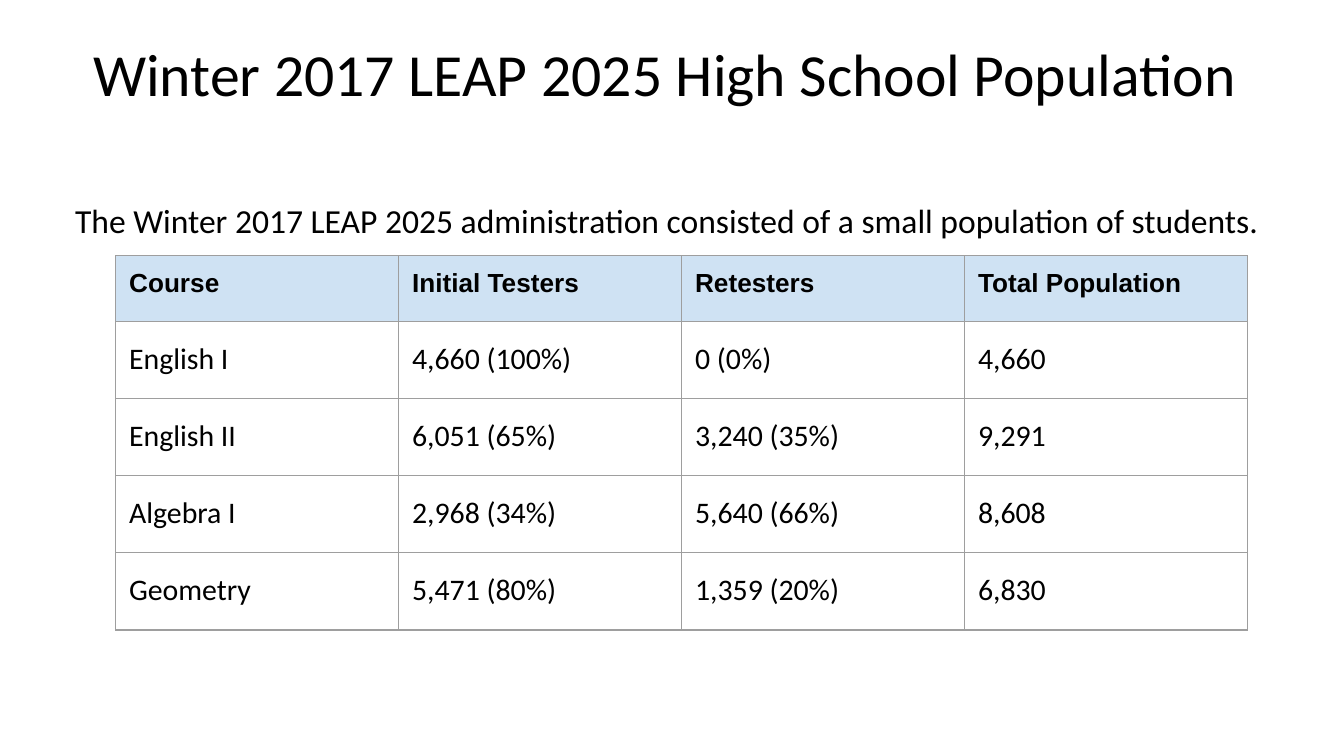
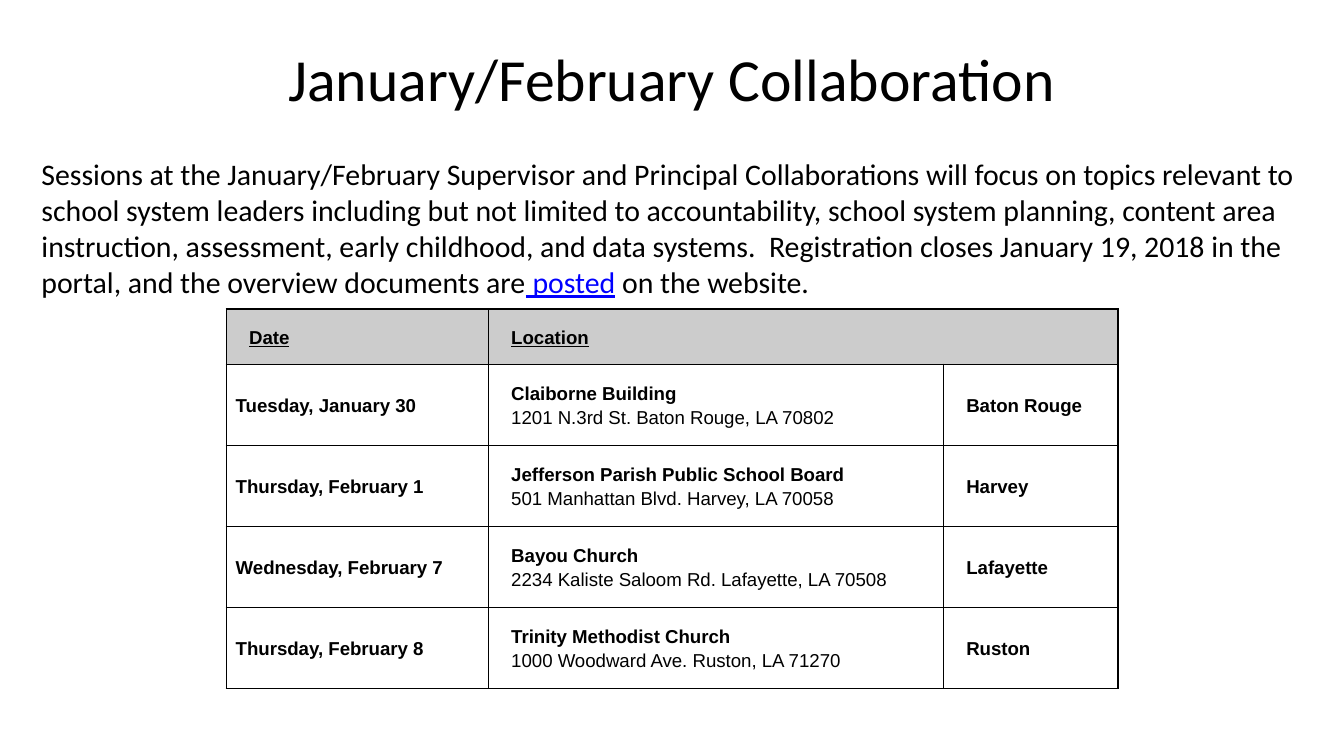
"""Build two slides on the Winter 2017 testers and the winter collaborations."""
from lxml import etree
from pptx import Presentation
from pptx.dml.color import RGBColor
from pptx.enum.text import MSO_ANCHOR, PP_ALIGN
from pptx.oxml.ns import qn
from pptx.util import Pt

CENTER = PP_ALIGN.CENTER
LEFT = PP_ALIGN.LEFT
MIDDLE = MSO_ANCHOR.MIDDLE
TOP = MSO_ANCHOR.TOP

COLORS = {
    "text": "000000",
    "link": "0000FF",
    "population_header": "CFE2F3",
    "population_border": "9E9E9E",
    "session_header": "CCCCCC",
    "session_border": "000000",
}
INSET = 7.2
LINE_SPACING = 1.15

POPULATION = [
    ("Course", "Initial Testers", "Retesters", "Total Population"),
    ("English I", "4,660 (100%)", "0 (0%)", "4,660"),
    ("English II", "6,051 (65%)", "3,240 (35%)", "9,291"),
    ("Algebra I", "2,968 (34%)", "5,640 (66%)", "8,608"),
    ("Geometry", "5,471 (80%)", "1,359 (20%)", "6,830"),
]
SESSIONS = [
    ("Tuesday, January 30", "Claiborne Building",
     "1201 N.3rd St. Baton Rouge, LA 70802", "Baton Rouge"),
    ("Thursday, February 1", "Jefferson Parish Public School Board",
     "501 Manhattan Blvd. Harvey, LA 70058", "Harvey"),
    ("Wednesday, February 7", "Bayou Church",
     "2234 Kaliste Saloom Rd. Lafayette, LA 70508", "Lafayette"),
    ("Thursday, February 8", "Trinity Methodist Church",
     "1000 Woodward Ave. Ruston, LA 71270", "Ruston"),
]
OVERVIEW = (
    "Sessions at the January/February Supervisor and Principal Collaborations will "
    "focus on topics relevant to school system leaders including but not limited to "
    "accountability, school system planning, content area instruction, assessment, "
    "early childhood, and data systems.  Registration closes January 19, 2018 in "
    "the portal, and the overview documents are"
)


def add_text(paragraph, text, size=16, font="Calibri", color="text",
             bold=False, underline=False):
    """Append a formatted run to a paragraph."""
    run = paragraph.add_run()
    run.text = text
    run.font.size = Pt(size)
    run.font.name = font
    run.font.bold = bold
    run.font.underline = underline
    run.font.color.rgb = RGBColor.from_string(COLORS[color])


def add_box(slide, left, top, width, height, anchor=TOP, align=LEFT):
    """Add a wrapping text box and return its first paragraph."""
    frame = slide.shapes.add_textbox(Pt(left), Pt(top), Pt(width), Pt(height)).text_frame
    frame.word_wrap = True
    frame.vertical_anchor = anchor
    frame.margin_left = frame.margin_right = Pt(INSET)
    frame.margin_top = frame.margin_bottom = Pt(INSET)
    paragraph = frame.paragraphs[0]
    paragraph.alignment = align
    return paragraph


def add_title(slide, text, top, height):
    """Add the centred slide title."""
    paragraph = add_box(slide, 36, top, 648, height, MIDDLE, CENTER)
    add_text(paragraph, text, size=32)


def set_borders(cell, color, width):
    """Draw the four borders of a table cell."""
    properties = cell._tc.get_or_add_tcPr()
    for side in ("lnL", "lnR", "lnT", "lnB"):
        line = etree.SubElement(properties, qn(f"a:{side}"), w=str(Pt(width)))
        fill = etree.SubElement(line, qn("a:solidFill"))
        etree.SubElement(fill, qn("a:srgbClr"), val=COLORS[color])


def add_table(slide, left, top, widths, heights, header, border, border_width):
    """Add a table with a filled header row and plain body cells."""
    frame = slide.shapes.add_table(len(heights), len(widths), Pt(left), Pt(top),
                                   Pt(sum(widths)), Pt(sum(heights)))
    table = frame.table
    table.horz_banding = table.first_row = False
    for column, width in zip(table.columns, widths):
        column.width = Pt(width)
    for index, (row, height) in enumerate(zip(table.rows, heights)):
        row.height = Pt(height)
        for cell in row.cells:
            set_borders(cell, border, border_width)
            if index == 0:
                cell.fill.solid()
                cell.fill.fore_color.rgb = RGBColor.from_string(COLORS[header])
            else:
                cell.fill.background()
    return table


def fill_cell(cell, lines, side=INSET, end=INSET, anchor=TOP, indent=0,
              spacing=LINE_SPACING):
    """Write one paragraph per (text, format) pair into a cell."""
    cell.margin_left = cell.margin_right = Pt(side)
    cell.margin_top = cell.margin_bottom = Pt(end)
    cell.vertical_anchor = anchor
    frame = cell.text_frame
    for index, (text, style) in enumerate(lines):
        paragraph = frame.add_paragraph() if index else frame.paragraphs[0]
        paragraph.line_spacing = spacing
        if indent:
            paragraph._p.get_or_add_pPr().set("marL", str(Pt(indent)))
        add_text(paragraph, text, **style)


def fill_session_cell(cell, *lines, indent=INSET):
    """Write the lines of a cell in the session table."""
    styled = [(text, {"size": 10, "font": "Arial", **style}) for text, style in lines]
    fill_cell(cell, styled, side=5, end=7.9, anchor=MIDDLE, indent=indent)


def build_population_slide(slide):
    """Show how many students tested in each course."""
    add_title(slide, "Winter 2017 LEAP 2025 High School Population ", 5, 67.7)
    paragraph = add_box(slide, 33.1, 96.5, 675.4, 270)
    paragraph.line_spacing = LINE_SPACING
    add_text(paragraph, "The Winter 2017 LEAP 2025 administration consisted of "
             "a small population of students.", size=18)
    table = add_table(slide, 62, 137, [151.6] * 4, [35.4] + [41.3] * 4,
                      "population_header", "population_border", 0.75)
    header_style = {"size": 14, "font": "Arial", "bold": True}
    for row, values in enumerate(POPULATION):
        for column, value in enumerate(values):
            fill_cell(table.cell(row, column), [(value, {} if row else header_style)],
                      spacing=LINE_SPACING if row else 1.0)


def build_collaboration_slide(slide):
    """List the dates and places of the collaboration sessions."""
    table = add_table(slide, 121.3, 165.6, [140.4, 243.8, 93.6], [29] + [41.9] * 4,
                      "session_header", "session_border", 1)
    table.cell(0, 1).merge(table.cell(0, 2))
    bold = {"bold": True}
    for column, heading in enumerate(("Date", "Location")):
        fill_session_cell(table.cell(0, column),
                          (heading, {"bold": True, "underline": True}))
    for row, (date, venue, address, city) in enumerate(SESSIONS, start=1):
        fill_session_cell(table.cell(row, 0), (date, bold), indent=0)
        fill_session_cell(table.cell(row, 1), (venue, bold), (address, {}))
        fill_session_cell(table.cell(row, 2), (city, bold))
    add_title(slide, "January/February Collaboration", 0, 83.5)
    paragraph = add_box(slide, 15.1, 76.3, 694.8, 121.7)
    add_text(paragraph, OVERVIEW)
    add_text(paragraph, " posted", color="link", underline=True)
    add_text(paragraph, " on the website.")


def main():
    """Create and save the presentation."""
    presentation = Presentation()
    presentation.slide_width = Pt(720)
    presentation.slide_height = Pt(405)
    blank = presentation.slide_layouts[6]
    for build in (build_population_slide, build_collaboration_slide):
        build(presentation.slides.add_slide(blank))
    presentation.save("out.pptx")


if __name__ == "__main__":
    main()
